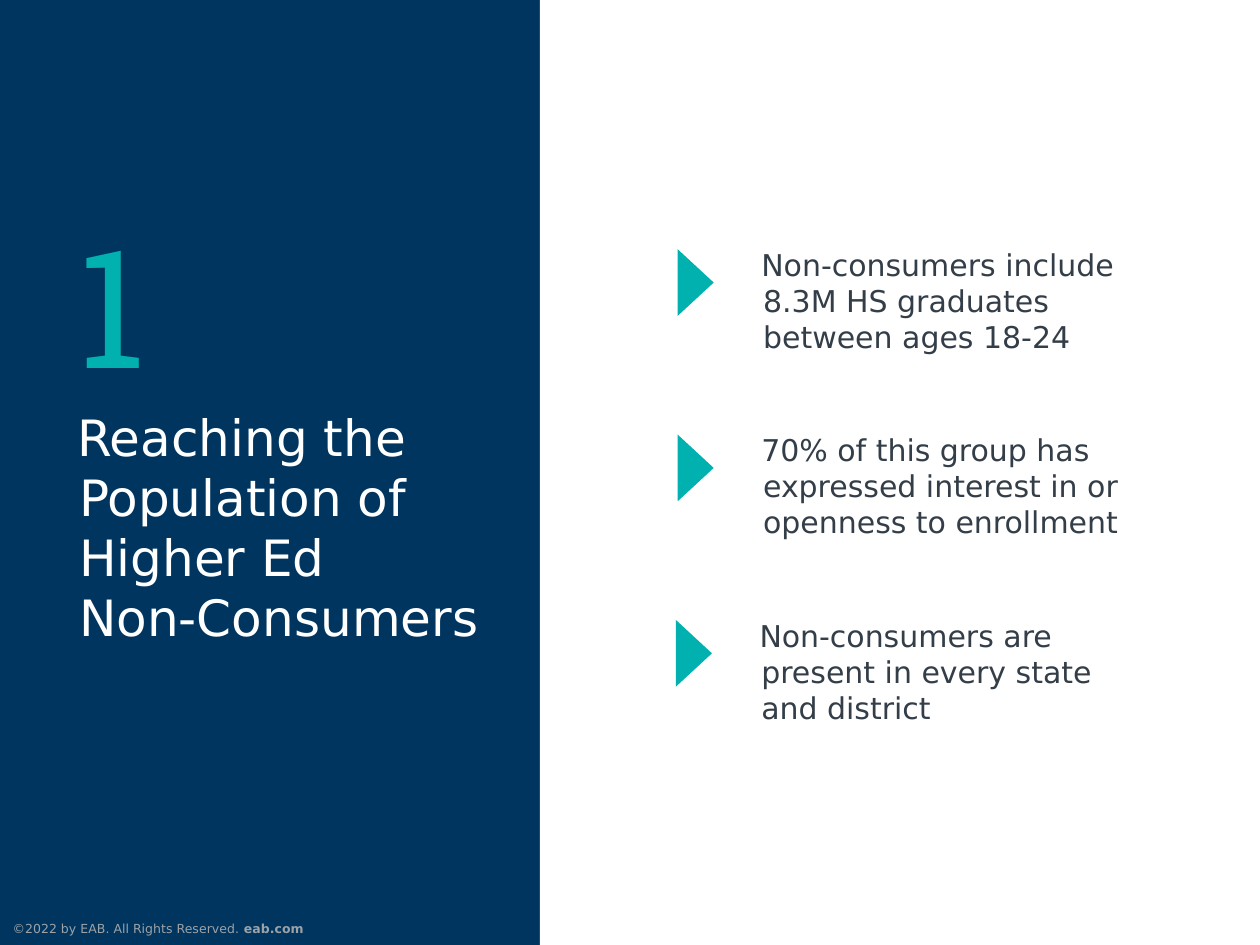
import pptx
import pptx.dml.color
import pptx.enum.shapes
import pptx.enum.text
import pptx.util
from pptx.util import Inches

# Content
SECTION_NUMBER = "1"
TITLE_LINES = ["Reaching the Population of Higher Ed", "Non-Consumers"]
POINTS = [  # text, left, width
    ("Non-consumers include 8.3M HS graduates between ages 18-24", 4.23, 2.18),
    ("70% of this group has expressed interest in or openness to enrollment", 4.23, 2.5),
    ("Non-consumers are present in every state and district", 4.22, 1.86),
]
COPYRIGHT = [("©2022 by EAB. All Rights Reserved. ", False), ("eab.com", True)]

# Style
NAVY, TEAL, WHITE, INK, GREY = "00355F", "00B1B0", "FFFFFF", "333E48", "9DA2A7"
FONT, NUMBER_FONT = "DejaVu Sans", "Roboto Slab"
FIRST_POINT_TOP, POINT_STEP = 1.37, 1.03
MARKER_LENGTH, MARKER_DEPTH = 0.37, 0.2


def color(hex_string):
    return pptx.dml.color.RGBColor.from_string(hex_string)


def place(shape, left, top, width, height):
    shape.left, shape.top = Inches(left), Inches(top)
    shape.width, shape.height = Inches(width), Inches(height)


def prepare_text(shape, margins=(0, 0, 0, 0), anchor="TOP", hanging=False):
    frame = shape.text_frame
    frame.word_wrap = True
    frame.auto_size = pptx.enum.text.MSO_AUTO_SIZE.NONE
    frame.vertical_anchor = pptx.enum.text.MSO_ANCHOR[anchor]
    (frame.margin_left, frame.margin_top,
     frame.margin_right, frame.margin_bottom) = map(Inches, margins)
    paragraph = frame.paragraphs[0]
    paragraph.alignment = pptx.enum.text.PP_ALIGN.LEFT
    if hanging:
        properties = paragraph._p.get_or_add_pPr()
        properties.set("marL", str(Inches(0.01)))
        properties.set("indent", str(-Inches(0.01)))
    return paragraph


def add_run(paragraph, text, size, hex_string, font=FONT, bold=False):
    run = paragraph.add_run()
    run.text = text
    run.font.name = font
    run.font.size = pptx.util.Pt(size)
    run.font.bold = bold
    run.font.color.rgb = color(hex_string)


def add_box(slide, box, **options):
    shape = slide.shapes.add_textbox(*map(Inches, box))
    return prepare_text(shape, **options)


def add_shape(slide, kind, box, hex_string):
    shape = slide.shapes.add_shape(
        pptx.enum.shapes.MSO_SHAPE[kind], *map(Inches, box))
    shape.shadow.inherit = False
    shape.fill.solid()
    shape.fill.fore_color.rgb = color(hex_string)
    shape.line.fill.background()
    return shape


presentation = pptx.Presentation()
presentation.slide_width, presentation.slide_height = Inches(7), Inches(5.25)
slide = presentation.slides.add_slide(presentation.slide_layouts[5])
slide.background.fill.solid()
slide.background.fill.fore_color.rgb = color(NAVY)

# Copyright line and white right-hand panel
paragraph = add_box(slide, (0, 5.12, 2.27, 0.13),
                    margins=(0.07, 0, 0.07, 0.05), anchor="BOTTOM")
for text, bold in COPYRIGHT:
    add_run(paragraph, text, 5, GREY, bold=bold)
add_shape(slide, "RECTANGLE", (3, 0, 4, 5.25), WHITE)

# Section number and title
paragraph = add_box(slide, (0.43, 1.13, 1.17, 1.11))
add_run(paragraph, SECTION_NUMBER, 66, TEAL, font=NUMBER_FONT)

title = slide.shapes.title
place(title, 0.43, 2.26, 2.34, 1.35)
paragraph = prepare_text(title, hanging=True)
for index, line in enumerate(TITLE_LINES):
    if index:
        paragraph.add_line_break()
    add_run(paragraph, line, 20, WHITE)

# Points, each with a triangle turned to the right
for index, (text, left, width) in enumerate(POINTS):
    top = FIRST_POINT_TOP + index * POINT_STEP
    paragraph = add_box(slide, (left, top, width, 0.61), hanging=True)
    add_run(paragraph, text, 12, INK)
    marker = add_shape(slide, "ISOSCELES_TRIANGLE",
                       (left - 0.55, top + 0.1, MARKER_LENGTH, MARKER_DEPTH), TEAL)
    marker.rotation = 90

presentation.save("out.pptx")
